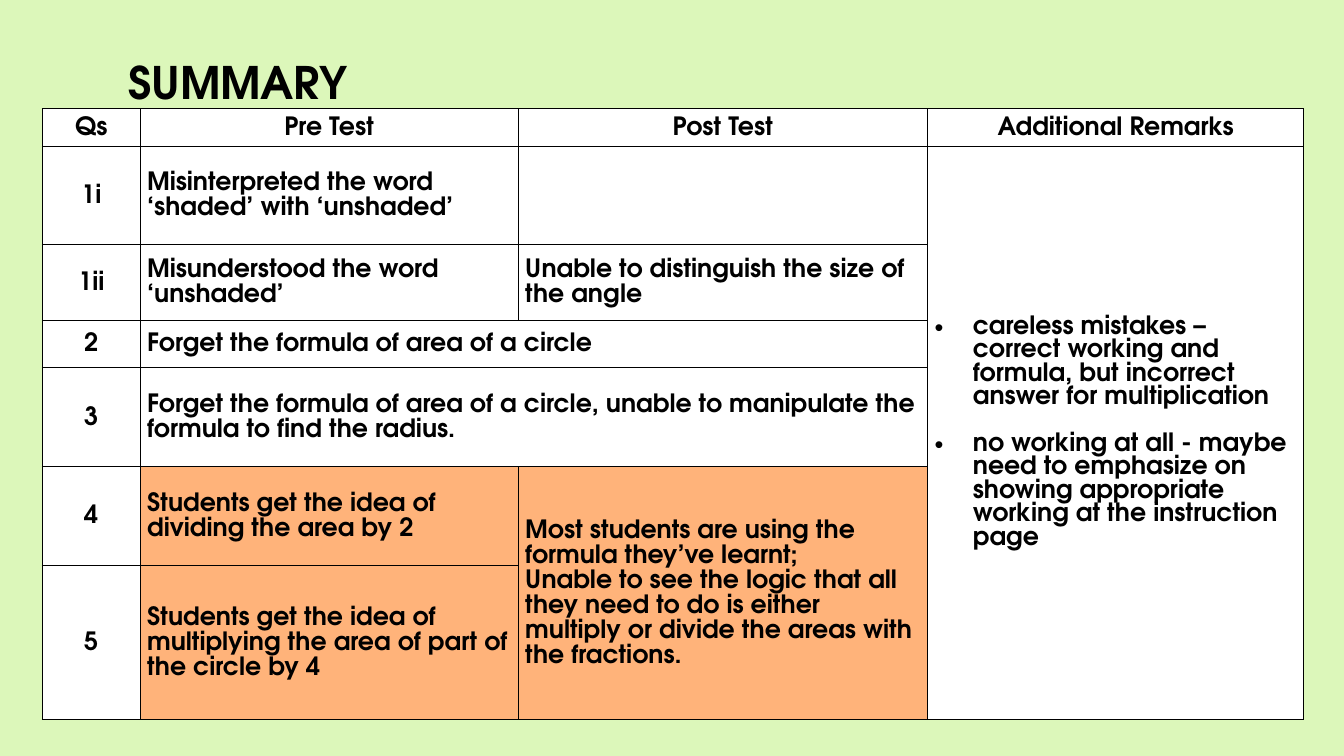
from dataclasses import dataclass

from lxml.etree import SubElement
from pptx import Presentation
from pptx.dml.color import RGBColor
from pptx.enum.text import MSO_ANCHOR, MSO_AUTO_SIZE, PP_ALIGN
from pptx.oxml import parse_xml
from pptx.oxml.ns import nsdecls, qn
from pptx.util import Inches, Pt

# Content: (row, column) -> paragraphs
TITLE = "SUMMARY"
HEADERS = ["Qs", "Pre Test", "Post Test", "Additional Remarks"]
QUESTIONS = ["1i", "1ii", "2", "3", "4", "5"]
FINDINGS = {
    (1, 1): ["Misinterpreted the word ‘shaded’ with ‘unshaded’"],
    (2, 1): ["Misunderstood the word ‘unshaded’"],
    (2, 2): ["Unable to distinguish the size of the angle"],
    (3, 1): ["Forget the formula of area of a circle"],
    (4, 1): ["Forget the formula of area of a circle, unable to manipulate "
             "the formula to find the radius."],
    (5, 1): ["Students get the idea of dividing the area by 2"],
    (5, 2): ["Most students are using the formula they’ve learnt;",
             "Unable to see the logic that all they need to do is either "
             "multiply or divide the areas with the fractions."],
    (6, 1): ["Students get the idea of multiplying the area of part of "
             "the circle by 4"],
}
REMARKS = [
    "careless mistakes – correct working and formula, but incorrect answer "
    "for multiplication",
    "no working at all - maybe need to emphasize on showing appropriate "
    "working at the instruction page",
]
MERGES = [((1, 3), (6, 3)), ((3, 1), (3, 2)), ((4, 1), (4, 2)), ((5, 2), (6, 2))]
HIGHLIGHTED = {(r, c) for r in (5, 6) for c in (1, 2)}

# Layout in inches
COL_WIDTHS = [0.97, 3.75, 4.06, 3.73]
ROW_HEIGHTS = [0.37, 0.98, 0.75, 0.47, 0.98, 0.98, 1.53]
TABLE_LEFT, TABLE_TOP = 0.42, 1.08


@dataclass(frozen=True)
class Theme:
    font: str = "TeX Gyre Adventor"
    background: RGBColor = RGBColor(0xDC, 0xF7, 0xBA)
    cell: RGBColor = RGBColor(0xFF, 0xFF, 0xFF)
    highlight: RGBColor = RGBColor(0xFF, 0xB3, 0x7A)
    ink: RGBColor = RGBColor(0, 0, 0)
    title_size: int = 32
    text_size: int = 18
    line_spacing: float = 1.07
    remark_gap: float = 16.8


THEME = Theme()


def add_run(p, text, size):
    r = p.add_run()
    r.text = text
    r.font.name = THEME.font
    r.font.size = Pt(size)
    r.font.bold = True
    r.font.color.rgb = THEME.ink


def add_bullet(p):
    pPr = p._p.get_or_add_pPr()
    pPr.set("marL", str(Inches(0.38)))
    pPr.set("indent", str(-Inches(0.38)))
    SubElement(pPr, qn("a:buFont"), typeface="Arial")
    SubElement(pPr, qn("a:buChar"), char="•")


def style_cell(cell, fill):
    cell.vertical_anchor = MSO_ANCHOR.MIDDLE
    cell.margin_left = cell.margin_right = Inches(0.07)
    cell.margin_top = cell.margin_bottom = 0
    cell.fill.solid()
    cell.fill.fore_color.rgb = fill
    tcPr = cell._tc.get_or_add_tcPr()
    for i, side in enumerate("LRTB"):
        tcPr.insert(i, parse_xml(
            f'<a:ln{side} {nsdecls("a")} w="{Pt(1)}"><a:solidFill>'
            f'<a:srgbClr val="{THEME.ink}"/></a:solidFill></a:ln{side}>'))


def fill_cell(cell, texts, centred=False, bulleted=False):
    tf = cell.text_frame
    for i, text in enumerate(texts):
        p = tf.add_paragraph() if i else tf.paragraphs[0]
        p.alignment = PP_ALIGN.CENTER if centred else PP_ALIGN.LEFT
        if bulleted:
            p.space_before = Pt(THEME.remark_gap if i else 0)
            add_bullet(p)
        else:
            p.line_spacing = THEME.line_spacing
        add_run(p, text, THEME.text_size)


def add_title(slide):
    sp = slide.shapes.title
    sp.left, sp.top = Inches(1.17), Inches(0.3)
    sp.width, sp.height = Inches(2.47), Inches(1.01)
    tf = sp.text_frame
    tf.auto_size = MSO_AUTO_SIZE.NONE
    tf.vertical_anchor = MSO_ANCHOR.MIDDLE
    p = tf.paragraphs[0]
    p.alignment = PP_ALIGN.LEFT
    add_run(p, TITLE, THEME.title_size)


def add_summary_table(slide):
    table = slide.shapes.add_table(
        len(ROW_HEIGHTS), len(COL_WIDTHS), Inches(TABLE_LEFT), Inches(TABLE_TOP),
        Inches(sum(COL_WIDTHS)), Inches(sum(ROW_HEIGHTS))).table
    for col, width in zip(table.columns, COL_WIDTHS):
        col.width = Inches(width)
    for row, height in zip(table.rows, ROW_HEIGHTS):
        row.height = Inches(height)

    # Cell fills, borders and spans
    for r in range(len(ROW_HEIGHTS)):
        for c in range(len(COL_WIDTHS)):
            fill = THEME.highlight if (r, c) in HIGHLIGHTED else THEME.cell
            style_cell(table.cell(r, c), fill)
    for first, last in MERGES:
        table.cell(*first).merge(table.cell(*last))

    # Cell text
    for c, header in enumerate(HEADERS):
        fill_cell(table.cell(0, c), [header], centred=True)
    for r, question in enumerate(QUESTIONS, start=1):
        fill_cell(table.cell(r, 0), [question], centred=True)
    for position, texts in FINDINGS.items():
        fill_cell(table.cell(*position), texts)
    fill_cell(table.cell(1, 3), REMARKS, bulleted=True)


def main():
    prs = Presentation()
    prs.slide_width, prs.slide_height = Inches(13.33), Inches(7.5)
    slide = prs.slides.add_slide(prs.slide_layouts[5])
    slide.background.fill.solid()
    slide.background.fill.fore_color.rgb = THEME.background
    add_title(slide)
    add_summary_table(slide)
    prs.save("out.pptx")


if __name__ == "__main__":
    main()
